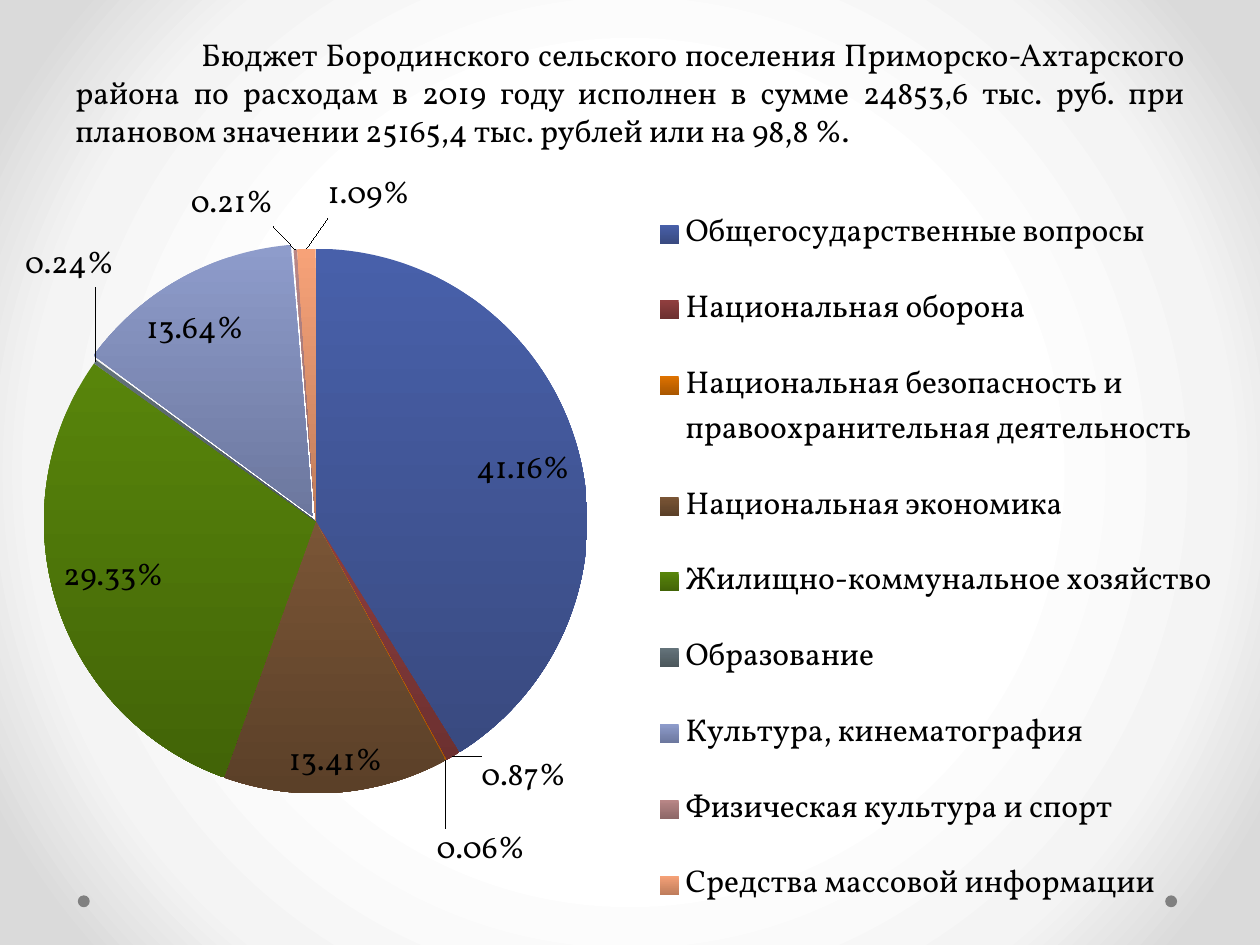
import copy

import lxml.etree
import pptx
import pptx.chart.data
import pptx.dml.color
import pptx.enum.chart
import pptx.enum.shapes
import pptx.enum.text
import pptx.oxml
import pptx.oxml.ns
import pptx.util

Cm = pptx.util.Cm
Pt = pptx.util.Pt
qn = pptx.oxml.ns.qn
FONT = "Vollkorn"
COLORS = {
    "text": "000000", "dot": "808080",
    "center": "FFFFFF", "middle": "F4F4F4", "edge": "DADADA",
}
EXPENSES = [
    ("Общегосударственные вопросы", 41.16, "4860AA", "394A80"),
    ("Национальная оборона", 0.87, "8F3E3E", "6C3030"),
    ("Национальная безопасность и правоохранительная деятельность", 0.06, "DE7200", "A85600"),
    ("Национальная экономика", 13.41, "7A5536", "5B4028"),
    ("Жилищно-коммунальное хозяйство", 29.33, "58850B", "426407"),
    ("Образование", 0.24, "64737A", "4B565B"),
    ("Культура, кинематография", 13.64, "8E9CCB", "6C779E"),
    ("Физическая культура и спорт", 0.21, "B98787", "8E6868"),
    ("Средства массовой информации", 1.09, "F7A278", "BF7D5C"),
]
CULTURE = 6
LABEL_SHIFTS = {
    1: (0.02, -0.01),
    2: (-0.01, 0.08),
    5: (0.02, -0.09),
    CULTURE: (-0.03, 0.03),
    7: (-0.05, -0.02),
    8: (0.05, -0.03),
}


def rgb(name):
    return pptx.dml.color.RGBColor.from_string(COLORS.get(name, name))


def style_font(font, size=18, color="text"):
    font.name = FONT
    font.size = Pt(size)
    font.color.rgb = rgb(color)


def add_text(p, text, **fmt):
    r = p.add_run()
    r.text = text
    style_font(r.font, **fmt)


def add_gradient(fill, top, bottom):
    fill.gradient()
    for stop, color in zip(fill.gradient_stops, (top, bottom)):
        stop.color.rgb = rgb(color)


def paint_background(s):
    fill = s.background.fill
    add_gradient(fill, "center", "edge")
    grad = next(s._element.iter(qn("a:gradFill")))
    stops = grad.find(qn("a:gsLst"))
    stops.insert(1, copy.deepcopy(stops[0]))
    for stop, color, pos in zip(fill.gradient_stops, ("center", "middle", "edge"), (0.5, 0.76, 0.92)):
        stop.color.rgb = rgb(color)
        stop.position = pos
    grad.remove(grad.find(qn("a:lin")))
    circle = lxml.etree.Element(qn("a:path"))
    circle.set("path", "circle")
    rect = lxml.etree.SubElement(circle, qn("a:fillToRect"))
    for side in "ltrb":
        rect.set(side, "50000")
    stops.addnext(circle)


def add_dots(s, x, y, w, size):
    for left in (x, x + w - size):
        sp = s.shapes.add_shape(pptx.enum.shapes.MSO_SHAPE.OVAL, left, y, size, size)
        sp.shadow.inherit = False
        sp.fill.solid()
        sp.fill.fore_color.rgb = rgb("dot")
        sp.line.fill.background()


def add_heading(s, x, y, w, h):
    tf = s.shapes.add_textbox(x, y, w, h).text_frame
    tf.word_wrap = True
    tf.vertical_anchor = pptx.enum.text.MSO_ANCHOR.BOTTOM
    p = tf.paragraphs[0]
    p.alignment = pptx.enum.text.PP_ALIGN.JUSTIFY
    p._p.get_or_add_pPr().set("indent", str(Cm(2.54)))
    add_text(p, "Бюджет Бородинского сельского поселения Приморско-Ахтарского района "
                "по расходам в 2019 году исполнен в сумме 24853,6 тыс. руб. "
                "при плановом значении 25165,4 тыс. рублей или на 98,8 %.")


def make_layout(**values):
    layout = lxml.etree.Element(qn("c:layout"))
    manual = lxml.etree.SubElement(layout, qn("c:manualLayout"))
    for tag, value in values.items():
        lxml.etree.SubElement(manual, qn("c:" + tag)).set("val", str(value))
    return layout


def find_indexed(parent, tag, i):
    return next(e for e in parent.findall(qn(tag)) if e.find(qn("c:idx")).get("val") == str(i))


def add_labels(series):
    positions = pptx.enum.chart.XL_LABEL_POSITION
    labels = series.data_labels
    labels.show_percentage = True
    labels.show_value = False
    labels.number_format = "0.00%"
    labels.number_format_is_linked = False
    labels.position = positions.INSIDE_END
    style_font(labels.font)
    root = series._element.find(qn("c:dLbls"))
    number_format = root.find(qn("c:numFmt"))
    for i, (dx, dy) in LABEL_SHIFTS.items():
        label = series.points[i].data_label
        label.position = positions.INSIDE_END if i == CULTURE else positions.OUTSIDE_END
        style_font(label.font)
        item = find_indexed(root, "c:dLbl", i)
        next(item.iter(qn("a:bodyPr"))).set("wrap", "none")
        layout = make_layout(x=dx, y=dy)
        item.find(qn("c:idx")).addnext(layout)
        layout.addnext(copy.deepcopy(number_format))
        item.find(qn("c:showVal")).set("val", "0")
        item.find(qn("c:showPercent")).set("val", "1")
    leader = root.find(qn("c:showLeaderLines"))
    if leader is None:
        leader = lxml.etree.SubElement(root, qn("c:showLeaderLines"))
    leader.set("val", "1")


def add_expense_pie(s, x, y, w, h):
    data = pptx.chart.data.CategoryChartData()
    data.categories = [row[0] for row in EXPENSES]
    data.add_series("Series 1", [row[1] for row in EXPENSES])
    chart = s.shapes.add_chart(pptx.enum.chart.XL_CHART_TYPE.PIE, x, y, w, h, data).chart
    chart.has_title = False
    style_font(chart.font)

    chart.has_legend = True
    legend = chart.legend
    legend.position = pptx.enum.chart.XL_LEGEND_POSITION.RIGHT
    legend.include_in_layout = False
    style_font(legend.font)
    root = legend._element
    for old in root.findall(qn("c:layout")):
        root.remove(old)
    root.find(qn("c:legendPos")).addnext(
        make_layout(xMode="edge", yMode="edge", x=0.52, y=0.02, w=0.45, h=0.98))

    area = next(chart._chartSpace.iter(qn("c:plotArea")))
    for old in area.findall(qn("c:layout")):
        area.remove(old)
    area.insert(0, make_layout(layoutTarget="inner", xMode="edge", yMode="edge",
                               x=0.033, y=0.101, w=0.434, h=0.718))

    plot = chart.plots[0]
    plot.vary_by_categories = True
    series = plot.series[0]
    for i, (name, value, top, bottom) in enumerate(EXPENSES):
        fmt = series.points[i].format
        add_gradient(fmt.fill, top, bottom)
        fmt.fill.gradient_angle = 270
        fmt.line.fill.background()
    explosion = lxml.etree.Element(qn("c:explosion"))
    explosion.set("val", "2")
    find_indexed(series._element, "c:dPt", CULTURE).find(qn("c:spPr")).addprevious(explosion)
    add_labels(series)


def main():
    prs = pptx.Presentation()
    prs.slide_width, prs.slide_height = Cm(25.4), Cm(19.05)
    s = prs.slides.add_slide(prs.slide_layouts[6])
    paint_background(s)
    add_dots(s, Cm(1.57), Cm(18.05), Cm(22.16), Cm(0.24))
    add_heading(s, Cm(1.27), Cm(0), Cm(22.86), Cm(3.12))
    add_expense_pie(s, Cm(0), Cm(3.33), Cm(25.3), Cm(15.6))
    prs.save("out.pptx")


if __name__ == "__main__":
    main()
